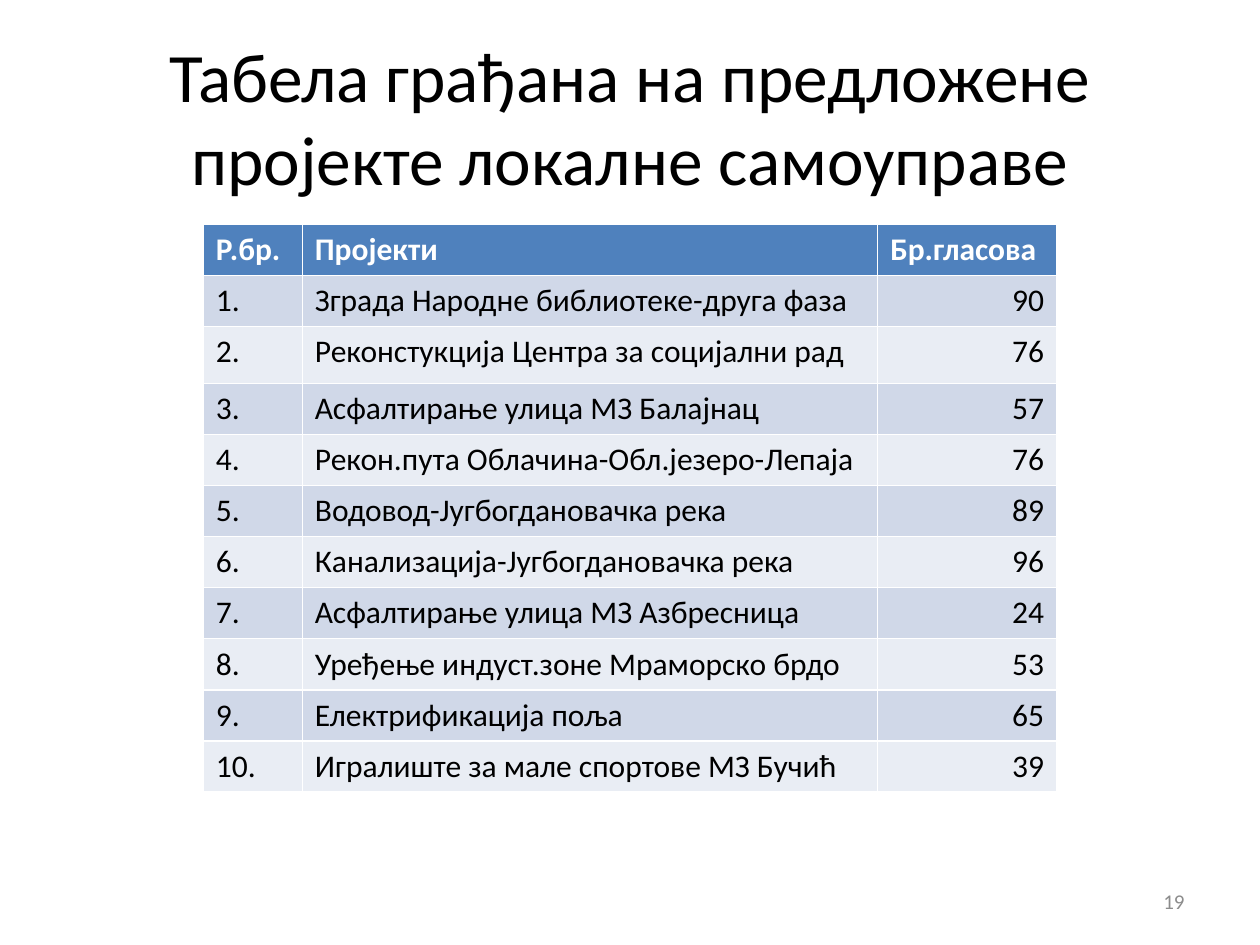
from pptx import Presentation
from pptx import util as u
from pptx.dml import color
from pptx.enum import text as t

Pt = u.Pt


def paint(value):
    return color.RGBColor.from_string(value)


def write(frame, content, size=18, ink="000000", bold=False,
          align=t.PP_ALIGN.LEFT, anchor=t.MSO_ANCHOR.TOP):
    frame.word_wrap = True
    frame.vertical_anchor = anchor
    paragraph = frame.paragraphs[0]
    paragraph.alignment = align
    run = paragraph.add_run()
    run.text = content
    run.font.name = "Calibri"
    run.font.size = Pt(size)
    run.font.bold = bold
    run.font.color.rgb = paint(ink)


headings = ["Р.бр.", "Пројекти", "Бр.гласова"]
projects = [
    ("Зграда Народне библиотеке-друга фаза", 90),
    ("Реконстукција Центра за социјални рад", 76),
    ("Асфалтирање улица МЗ Балајнац", 57),
    ("Рекон.пута Облачина-Обл.језеро-Лепаја", 76),
    ("Водовод-Југбогдановачка река", 89),
    ("Канализација-Југбогдановачка река", 96),
    ("Асфалтирање улица МЗ Азбресница", 24),
    ("Уређење индуст.зоне Мраморско брдо", 53),
    ("Електрификација поља", 65),
    ("Игралиште за мале спортове МЗ Бучић", 39),
]

deck = Presentation()
deck.slide_width, deck.slide_height = Pt(720), Pt(540)
slide = deck.slides.add_slide(deck.slide_layouts[5])

title = slide.shapes.title
title.left, title.top, title.width, title.height = Pt(36), Pt(21.6), Pt(648), Pt(90)
title.text_frame.auto_size = t.MSO_AUTO_SIZE.NONE
write(title.text_frame, "Табела грађана на предложене пројекте локалне самоуправе",
      size=39.6, align=t.PP_ALIGN.CENTER, anchor=t.MSO_ANCHOR.MIDDLE)

votes = slide.shapes.add_table(len(projects) + 1, len(headings),
                               Pt(116.2), Pt(128.2), Pt(487.6), Pt(324)).table
for column, width in zip(votes.columns, (56.6, 328.8, 102.2)):
    column.width = Pt(width)
for row in votes.rows:
    row.height = Pt(29.2)
votes.rows[2].height = Pt(32.4)

for col, heading in enumerate(headings):
    cell = votes.cell(0, col)
    cell.fill.solid()
    cell.fill.fore_color.rgb = paint("4F81BD")
    write(cell.text_frame, heading, ink="FFFFFF", bold=True)

for number, (project, count) in enumerate(projects, start=1):
    for col, entry in enumerate((f"{number}.", project, str(count))):
        cell = votes.cell(number, col)
        cell.fill.solid()
        cell.fill.fore_color.rgb = paint("D0D8E8" if number % 2 else "E9EDF4")
        write(cell.text_frame, entry,
              align=t.PP_ALIGN.RIGHT if col == 2 else t.PP_ALIGN.LEFT)

page_number = slide.shapes.add_textbox(Pt(516), Pt(500.5), Pt(168), Pt(28.75))
write(page_number.text_frame, "19", size=12, ink="8C8C8C",
      align=t.PP_ALIGN.RIGHT, anchor=t.MSO_ANCHOR.MIDDLE)

deck.save("out.pptx")
